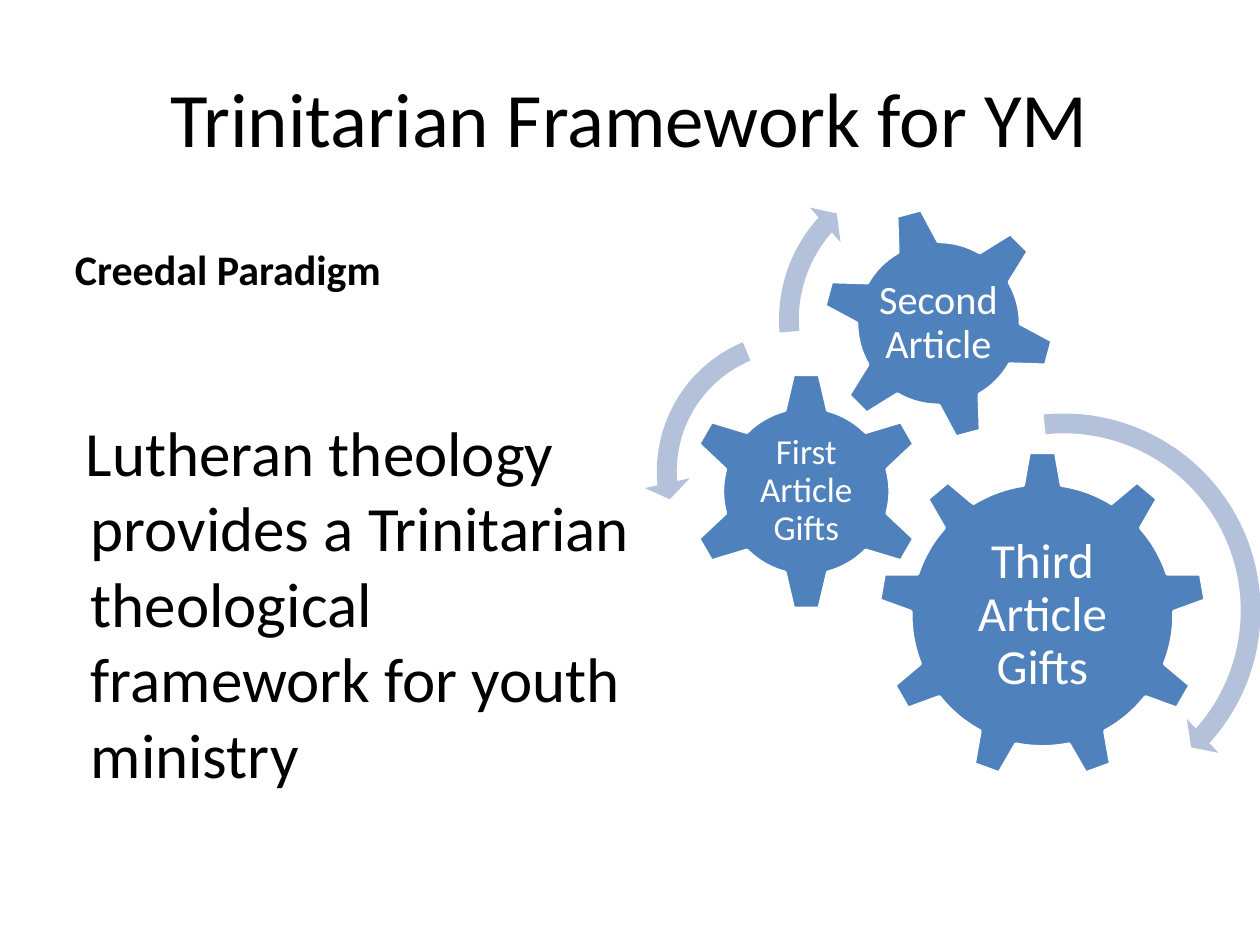
from pptx import Presentation
from pptx.dml.color import RGBColor
from pptx.enum.shapes import MSO_SHAPE as Preset
from pptx.enum.text import MSO_ANCHOR as Anchor, PP_ALIGN as Align
from pptx.util import Cm, Pt

COLORS = {"text": "000000", "gear": "4F81BD", "arrow": "B3C1DB", "white": "FFFFFF"}
FONT = "Calibri"

# Preset, left, top, size, label, label width, label height, point size, rotation
GEARS = [
    (Preset.GEAR_9, 4.72, 5.97, 6.63, "Third Article Gifts", 3.96, 3.4, 28, 0),
    (Preset.GEAR_6, 0.86, 4.37, 4.83, "First Article Gifts", 2.39, 2.39, 20, 0),
    (Preset.GEAR_6, 3.58, 1.04, 4.72, "Second Article", 2.64, 2.64, 23, -15),
]
# Preset, left, top, size, band %, (head, end, start) in degrees, head width %
ARROWS = [
    (Preset.CIRCULAR_ARROW, 4.72 - 0.5, 4.95, 8.48, 4.7, (4.98, 42, 264.23), 5.5),
    (Preset.LEFT_CIRCULAR_ARROW, 0, 3.3, 6.17, 6.5, (7.17, 174.82, 247.3), 7.5),
    (Preset.CIRCULAR_ARROW, 2.46, 0, 6.65, 6, (6.57, 221.9, 175.14), 7),
]


def rgb(name):
    return RGBColor.from_string(COLORS[name])


def add_text(slide, box, text, size, color="text", anchor=Anchor.TOP, align=Align.LEFT):
    """Add a one-paragraph text box and return its frame and paragraph."""
    frame = slide.shapes.add_textbox(*map(Cm, box)).text_frame
    frame.word_wrap = True
    frame.vertical_anchor = anchor
    paragraph = frame.paragraphs[0]
    paragraph.text = text
    paragraph.alignment = align
    paragraph.font.name = FONT
    paragraph.font.size = Pt(size)
    paragraph.font.color.rgb = rgb(color)
    return frame, paragraph


def add_preset(slide, preset, left, top, size, color):
    shape = slide.shapes.add_shape(preset, Cm(left), Cm(top), Cm(size), Cm(size))
    shape.shadow.inherit = False
    shape.fill.solid()
    shape.fill.fore_color.rgb = rgb(color)
    return shape


def add_title(slide, box):
    add_text(slide, box, "Trinitarian Framework for YM", 44,
             anchor=Anchor.MIDDLE, align=Align.CENTER)


def add_body(slide, left, top):
    _, heading = add_text(slide, (left + 0.63, top, 11.23, 1.78), "Creedal Paradigm", 24,
                          anchor=Anchor.BOTTOM)
    heading.font.bold = True
    frame, paragraph = add_text(
        slide, (left, top + 2.08, 12.7, 10.97),
        "Lutheran theology provides a Trinitarian theological framework for youth ministry", 36)
    frame.margin_top = Cm(1.98)
    properties = paragraph._p.get_or_add_pPr()
    properties.set("marL", str(Cm(0.95)))
    properties.set("indent", str(Cm(-0.1)))


def add_gear(slide, preset, left, top, size, label, width, height, points, rotation):
    gear = add_preset(slide, preset, left, top, size, "gear")
    gear.line.color.rgb = rgb("white")
    gear.line.width = Pt(2)
    gear.rotation = rotation
    box = (left + (size - width) / 2, top + (size - height) / 2, width, height)
    frame, paragraph = add_text(slide, box, label, points, "white",
                                Anchor.MIDDLE, Align.CENTER)
    frame.margin_left = frame.margin_right = Cm(0.08)
    frame.margin_top = frame.margin_bottom = Cm(0.08)
    paragraph.line_spacing = 0.9


def add_arrow(slide, preset, left, top, size, band, angles, head):
    arrow = add_preset(slide, preset, left, top, size, "arrow")
    arrow.line.fill.background()
    # Angles are stored in 60000ths of a degree, adjustments in 100000ths
    values = [band / 100, *(angle * 0.6 for angle in angles), head / 100]
    for index, value in enumerate(values):
        arrow.adjustments[index] = value


def add_gear_diagram(slide, left, top):
    for preset, x, y, *details in GEARS:
        add_gear(slide, preset, left + x, top + y, *details)
    for preset, x, y, *details in ARROWS:
        add_arrow(slide, preset, left + x, top + y, *details)


def main():
    presentation = Presentation()
    presentation.slide_width, presentation.slide_height = Cm(25.4), Cm(19.05)
    slide = presentation.slides.add_slide(presentation.slide_layouts[6])
    add_title(slide, (1.27, 0.76, 22.86, 3.18))
    add_body(slide, 0.63, 4.27)
    add_gear_diagram(slide, 12.98, 3.12)
    presentation.save("out.pptx")


if __name__ == "__main__":
    main()
